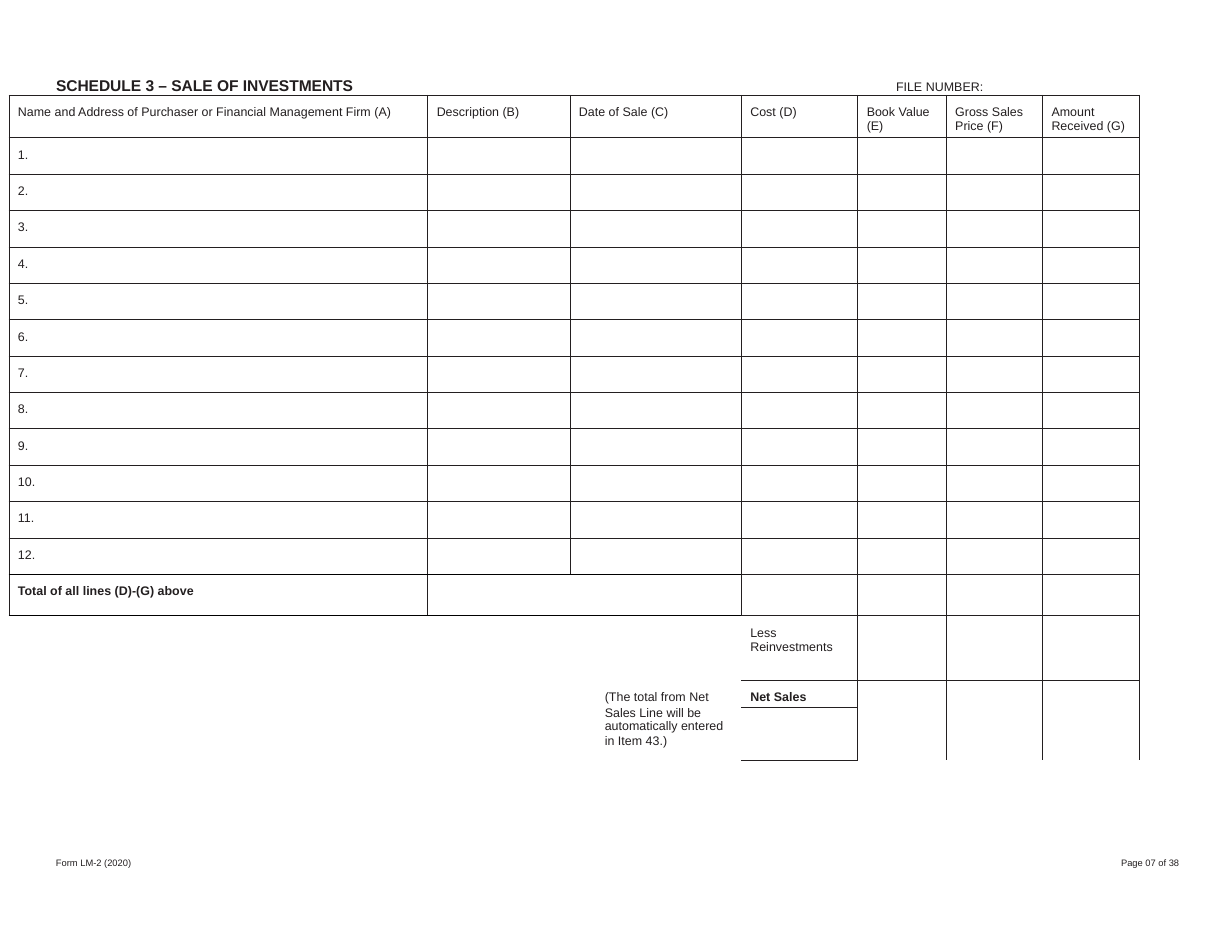
from pptx import Presentation
from pptx.dml.color import RGBColor
from pptx.enum.text import MSO_ANCHOR, MSO_AUTO_SIZE, PP_ALIGN
from pptx.oxml.ns import qn
from pptx.util import Inches, Pt
from lxml import etree

TOP, LEFT = MSO_ANCHOR.TOP, PP_ALIGN.LEFT
FONT = "Arial"
COLORS = {"ink": "231F20", "black": "000000"}
THIN, HEAVY, NONE = ("ink", 0.5), ("black", 1), None

# Content
TITLE = "SCHEDULE 3 – SALE OF INVESTMENTS"
LABELS = [  # text, left, top, width, height, size
    ("FILE NUMBER:", 8, 0.7, 0.81, 0.16, 8),
    ("Form LM-2 (2020)", 0.5, 7.64, 1.8, 0.11, 6),
    ("Page 07 of 38", 10.01, 7.64, 0.64, 0.11, 6),
]
HEADERS = [
    "Name and Address of Purchaser or Financial Management Firm (A)",
    "Description (B)", "Date of Sale (C)", "Cost (D)",
    "Book Value (E)", "Gross Sales Price (F)", "Amount Received (G)",
]
NOTE = ["(The total from Net", "Sales Line will be",
        "automatically entered", "in Item 43.)"]
LINES = 12

# Table grid
TABLE_LEFT, TABLE_TOP = 0.08, 0.85
COLUMNS = [3.74, 1.27, 1.53, 1.04, 0.79, 0.86, 0.86]
ROWS = [0.38] + [3.9 / LINES] * LINES + [0.37, 0.58, 0.24, 0.12, 0.12, 0.23]
TOTAL = LINES + 1
LESS, NET = TOTAL + 1, TOTAL + 2
LAST = len(ROWS) - 1
COST = 3
NOTE_INDENT = 5.24


def write(frame, text, size, bold=False, spacing=None):
    para = frame.paragraphs[0]
    para.alignment = LEFT
    para.space_before = Pt(0)
    if spacing:
        para.line_spacing = Pt(spacing)
    span = para.add_run()
    span.text = text
    formats = {"name": FONT, "size": Pt(size), "bold": bold}
    for name, value in formats.items():
        setattr(span.font, name, value)
    span.font.color.rgb = RGBColor.from_string(COLORS["ink"])
    return para


def place(box, left, top, width, height):
    box.left, box.top = Inches(left), Inches(top)
    box.width, box.height = Inches(width), Inches(height)
    formats = {"margin_left": 0, "margin_right": 0, "margin_bottom": 0,
               "margin_top": Inches(0.01), "vertical_anchor": TOP,
               "word_wrap": True, "auto_size": MSO_AUTO_SIZE.NONE}
    for name, value in formats.items():
        setattr(box.text_frame, name, value)


def horizontal_rule(line, column):
    """Rule above row number `line`, in one column."""
    if column < COST:
        if line > LESS:
            return NONE
        return HEAVY if line >= TOTAL else THIN
    last_inner = NET + 1 if column == COST else NET
    return NONE if last_inner < line <= LAST else THIN


def vertical_rule(row, line):
    """Rule to the left of column number `line`, in one row."""
    if line < COST and row >= TOTAL:
        return THIN if row == TOTAL and line < 2 else NONE
    return THIN


def add_border(cell, side, rule):
    border = etree.SubElement(cell._tc.get_or_add_tcPr(), qn("a:" + side))
    if rule is NONE:
        etree.SubElement(border, qn("a:noFill"))
        return
    color, weight = rule
    border.set("w", str(Pt(weight)))
    fill = etree.SubElement(border, qn("a:solidFill"))
    etree.SubElement(fill, qn("a:srgbClr"), val=COLORS[color])


deck = Presentation()
deck.slide_width, deck.slide_height = Inches(11), Inches(8.5)
page = deck.slides.add_slide(deck.slide_layouts[5])

# Title and labels
title = page.shapes.title
place(title, 0.5, 0.67, 4.07, 0.18)
write(title.text_frame, TITLE, 10, bold=True)
for text, left, top, width, height, size in LABELS:
    box = page.shapes.add_textbox(0, 0, 0, 0)
    place(box, left, top, width, height)
    write(box.text_frame, text, size)

# Table frame
table = page.shapes.add_table(
    len(ROWS), len(COLUMNS), Inches(TABLE_LEFT), Inches(TABLE_TOP),
    Inches(sum(COLUMNS)), Inches(sum(ROWS))).table
table.first_row = table.horz_banding = False
for column, width in zip(table.columns, COLUMNS):
    column.width = Inches(width)
for row, height in zip(table.rows, ROWS):
    row.height = Inches(height)

# Cell borders and margins
for r in range(len(ROWS)):
    for c in range(len(COLUMNS)):
        cell = table.cell(r, c)
        add_border(cell, "lnL", vertical_rule(r, c))
        add_border(cell, "lnR", vertical_rule(r, c + 1))
        add_border(cell, "lnT", horizontal_rule(r, c))
        add_border(cell, "lnB", horizontal_rule(r + 1, c))
        cell.fill.background()
        cell.margin_left = Inches(0.08)
        cell.margin_right = cell.margin_bottom = 0
        cell.margin_top = Inches(0.09 if r <= NET else 0)
        empty_end = cell.text_frame.paragraphs[0]._p.get_or_add_endParaRPr()
        empty_end.set("sz", "600")

# Merged areas
table.cell(TOTAL, 1).merge(table.cell(TOTAL, 2))
for r in range(LESS, LAST + 1):
    table.cell(r, 0).merge(table.cell(r, COST - 1))
for c in range(COST + 1, len(COLUMNS)):
    table.cell(NET, c).merge(table.cell(LAST, c))

# Table text
for c, header in enumerate(HEADERS):
    write(table.cell(0, c).text_frame, header, 8)
for number in range(1, LINES + 1):
    write(table.cell(number, 0).text_frame, f"{number}.", 8)
write(table.cell(TOTAL, 0).text_frame, "Total of all lines (D)-(G) above", 8, bold=True)
write(table.cell(LESS, COST).text_frame, "Less Reinvestments", 8)
write(table.cell(NET, COST).text_frame, "Net Sales", 8, bold=True, spacing=8.8)

# Note, indented to stand beside the net sales
for r, text in enumerate(NOTE, NET):
    para = write(table.cell(r, 0).text_frame, text, 8,
                 spacing=8.2 if NET < r < LAST else 8.8)
    properties = para._p.get_or_add_pPr()
    properties.set("marL", str(Inches(NOTE_INDENT)))
    properties.set("indent", "0")

deck.save("out.pptx")
